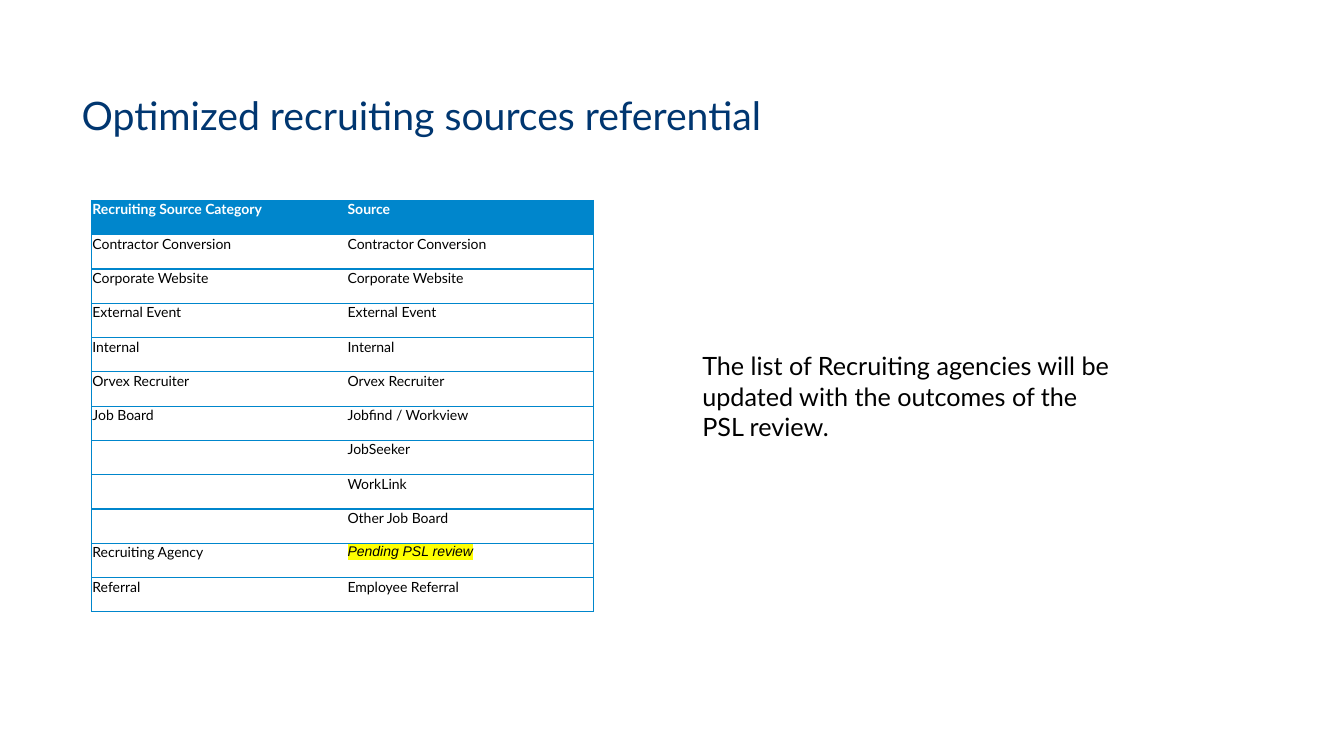
"""Build the slide on recruiting sources."""
import dataclasses

import lxml.etree
import pptx
import pptx.dml.color
import pptx.enum.text
import pptx.oxml.ns
import pptx.util

Cm = pptx.util.Cm


@dataclasses.dataclass(frozen=True)
class Theme:
    navy: str = "003670"
    blue: str = "0086CC"
    white: str = "FFFFFF"
    black: str = "000000"
    yellow: str = "FFFF00"
    font: str = "Lato"
    accent: str = "Arial"
    title: int = 28
    body: int = 18
    small: int = 10


THEME = Theme()
ROWS = [
    ("Recruiting Source Category", "Source"),
    ("Contractor Conversion", "Contractor Conversion"),
    ("Corporate Website", "Corporate Website"),
    ("External Event", "External Event"),
    ("Internal", "Internal"),
    ("Orvex Recruiter", "Orvex Recruiter"),
    ("Job Board", "Jobfind / Workview"),
    ("", "JobSeeker"),
    ("", "WorkLink"),
    ("", "Other Job Board"),
    ("Recruiting Agency", "Pending PSL review"),
    ("Referral", "Employee Referral"),
]
PENDING = "Pending PSL review"


def color(code):
    return pptx.dml.color.RGBColor.from_string(code)


def node(parent, tag, **attrs):
    return lxml.etree.SubElement(parent, pptx.oxml.ns.qn(tag), **attrs)


def write(frame, words, size, ink=THEME.black, face=THEME.font,
          bold=False, italic=False, mark=None, space=None):
    para = frame.paragraphs[0]
    para.line_spacing = space
    run = para.add_run()
    run.text = words
    font = run.font
    font.size = pptx.util.Pt(size)
    font.bold = bold
    font.italic = italic
    font.color.rgb = color(ink)
    font.name = face
    if mark:
        props = run._r.get_or_add_rPr()
        light = node(props, "a:highlight")
        node(light, "a:srgbClr", val=mark)
        props.find(pptx.oxml.ns.qn("a:latin")).addprevious(light)


def add_box(slide, area, words, size, left=0.25, anchor="TOP", **style):
    frame = slide.shapes.add_textbox(*map(Cm, area)).text_frame
    frame.word_wrap = True
    frame.margin_left = Cm(left)
    frame.vertical_anchor = pptx.enum.text.MSO_ANCHOR[anchor]
    write(frame, words, size, **style)


def edge(cell, sides):
    props = cell._tc.get_or_add_tcPr()
    for side in "LRTB":
        line = node(props, f"a:ln{side}", w=str(pptx.util.Pt(1)))
        if side in sides:
            fill = node(line, "a:solidFill")
            node(fill, "a:srgbClr", val=THEME.blue)
        else:
            node(line, "a:noFill")


def add_grid(slide):
    area = map(Cm, (2.31, 5.05, 12.65, 10.37))
    grid = slide.shapes.add_table(len(ROWS), 2, *area).table
    for col, width in zip(grid.columns, (6.43, 6.22)):
        col.width = Cm(width)
    for i, row in enumerate(ROWS):
        head = i == 0
        for j, words in enumerate(row):
            cell = grid.cell(i, j)
            cell.margin_left = cell.margin_right = cell.margin_top = Cm(0.02)
            cell.margin_bottom = 0
            edge(cell, "RTB" if j else "LTB")
            cell.fill.solid()
            cell.fill.fore_color.rgb = color(THEME.blue if head else THEME.white)
            style = {"ink": THEME.white, "bold": True} if head else {}
            if words == PENDING:
                style = {"face": THEME.accent, "italic": True, "mark": THEME.yellow}
            if words:
                write(cell.text_frame, words, THEME.small, **style)


def main():
    deck = pptx.Presentation()
    deck.slide_width, deck.slide_height = Cm(33.87), Cm(19.05)
    slide = deck.slides.add_slide(deck.slide_layouts[6])
    add_box(slide, (2.06, 1.37, 29.79, 2.26),
            "Optimized recruiting sources referential", THEME.title,
            left=0, anchor="BOTTOM", ink=THEME.navy, space=0.9)
    add_grid(slide)
    add_box(slide, (17.45, 8.71, 11, 3.56),
            "The list of Recruiting agencies will be updated with the "
            "outcomes of the PSL review.", THEME.body)
    deck.save("out.pptx")


if __name__ == "__main__":
    main()
